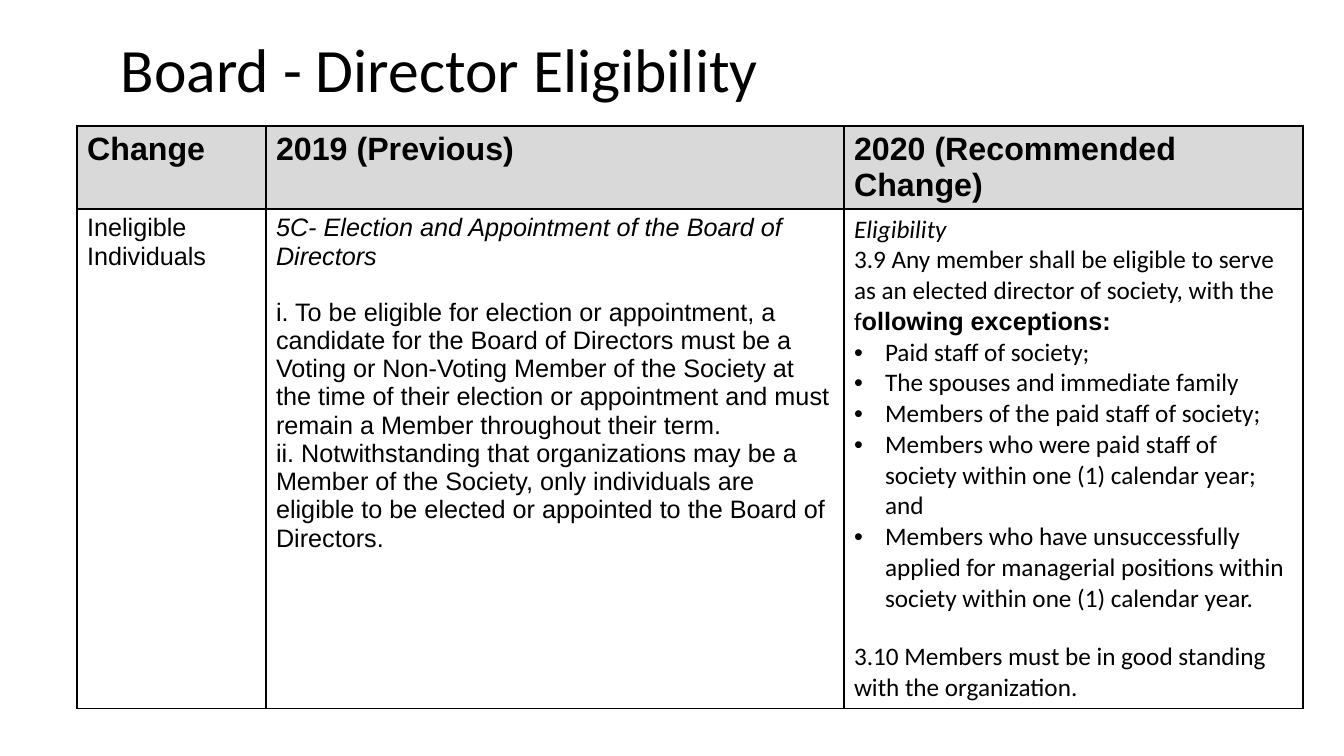
from dataclasses import dataclass

from lxml.etree import SubElement
from pptx import Presentation
from pptx.dml.color import RGBColor
from pptx.enum.text import MSO_ANCHOR
from pptx.oxml.ns import qn
from pptx.table import _Cell
from pptx.text.text import _Paragraph
from pptx.util import Emu, Pt

PX = 914400 / 100.8
BLACK = RGBColor(0x00, 0x00, 0x00)
WHITE = RGBColor(0xFF, 0xFF, 0xFF)
GREY = RGBColor(0xD9, 0xD9, 0xD9)
ARIAL, CALIBRI = "Arial", "Calibri"
COLS = (189, 578, 459)
ROWS = (83, 499)
INDENT = 31
GAP = 20


@dataclass(frozen=True)
class Para:
    text: str
    font: str = ARIAL
    size: int = 18
    bold: bool = False
    italic: bool = False
    bullet: bool = False
    gap: int = 0
    tail: str = ""  # bold Arial ending


def head(text: str) -> list[Para]:
    return [Para(text, size=23, bold=True)]


def item(text: str) -> Para:
    return Para(text, CALIBRI, bullet=True)


CELLS = (
    (head("Change"), head("2019 (Previous)"), head("2020 (Recommended Change)")),
    (
        [Para("Ineligible Individuals")],
        [
            Para("5C- Election and Appointment of the Board of Directors", italic=True),
            Para("i. To be eligible for election or appointment, a candidate for the "
                 "Board of Directors must be a Voting or Non-Voting Member of the "
                 "Society at the time of their election or appointment and must "
                 "remain a Member throughout their term.", gap=GAP),
            Para("ii. Notwithstanding that organizations may be a Member of the "
                 "Society, only individuals are eligible to be elected or appointed "
                 "to the Board of Directors."),
        ],
        [
            Para("Eligibility", CALIBRI, italic=True),
            Para("3.9 Any member shall be eligible to serve as an elected director of "
                 "society, with the f", CALIBRI, tail="ollowing exceptions:"),
            item("Paid staff of society;"),
            item("The spouses and immediate family"),
            item("Members of the paid staff of society;"),
            item("Members who were paid staff of society within one (1) calendar "
                 "year; and"),
            item("Members who have unsuccessfully applied for managerial positions "
                 "within society within one (1) calendar year."),
            Para("3.10 Members must be in good standing with the organization.",
                 CALIBRI, gap=GAP),
        ],
    ),
)


def px(size: int) -> Emu:
    return Emu(round(size * PX))


def add_bullet(line: _Paragraph) -> None:
    props = line._p.get_or_add_pPr()
    props.set("marL", str(px(INDENT)))
    props.set("indent", str(-px(INDENT)))
    SubElement(props, qn("a:buFont"), typeface=ARIAL)
    SubElement(props, qn("a:buChar"), char="•")


def write(line: _Paragraph, para: Para) -> None:
    line.text = para.text
    if para.tail:
        line.add_run().text = para.tail
    for run in line.runs:
        font = run.font
        font.name, font.size = para.font, Pt(para.size)
        font.bold, font.italic = para.bold, para.italic
        font.color.rgb = BLACK
    if para.tail:
        font = line.runs[-1].font
        font.name, font.bold = ARIAL, True
    if para.gap:
        line.space_before = Pt(para.gap)
    if para.bullet:
        add_bullet(line)


def add_border(cell: _Cell) -> None:
    """Draw all four edges; they must precede the fill in the cell's XML."""
    props = cell._tc.get_or_add_tcPr()
    for side in ("lnL", "lnR", "lnT", "lnB"):
        edge = SubElement(props, qn(f"a:{side}"), w=str(Pt(1)))
        fill = SubElement(edge, qn("a:solidFill"))
        SubElement(fill, qn("a:srgbClr"), val=str(BLACK))


def fill_cell(cell: _Cell, paras: list[Para], color: RGBColor) -> None:
    add_border(cell)
    cell.fill.solid()
    cell.fill.fore_color.rgb = color
    frame = cell.text_frame
    for i, para in enumerate(paras):
        write(frame.add_paragraph() if i else frame.paragraphs[0], para)


def main() -> None:
    deck = Presentation()
    deck.slide_width, deck.slide_height = px(1344), px(756)
    slide = deck.slides.add_slide(deck.slide_layouts[6])

    table = slide.shapes.add_table(
        len(ROWS), len(COLS), px(77), px(126), px(sum(COLS)), px(sum(ROWS))).table
    table.first_row = table.horz_banding = False
    for col, width in zip(table.columns, COLS):
        col.width = px(width)
    for row, height, cells, color in zip(table.rows, ROWS, CELLS, (GREY, WHITE)):
        row.height = px(height)
        for cell, paras in zip(row.cells, cells):
            fill_cell(cell, paras, color)

    title = slide.shapes.add_textbox(px(111), px(0), px(1159), px(146)).text_frame
    title.word_wrap = True
    title.vertical_anchor = MSO_ANCHOR.MIDDLE
    line = title.paragraphs[0]
    write(line, Para("Board - Director Eligibility", CALIBRI, 44))
    line.line_spacing = 0.9

    deck.save("out.pptx")


if __name__ == "__main__":
    main()
